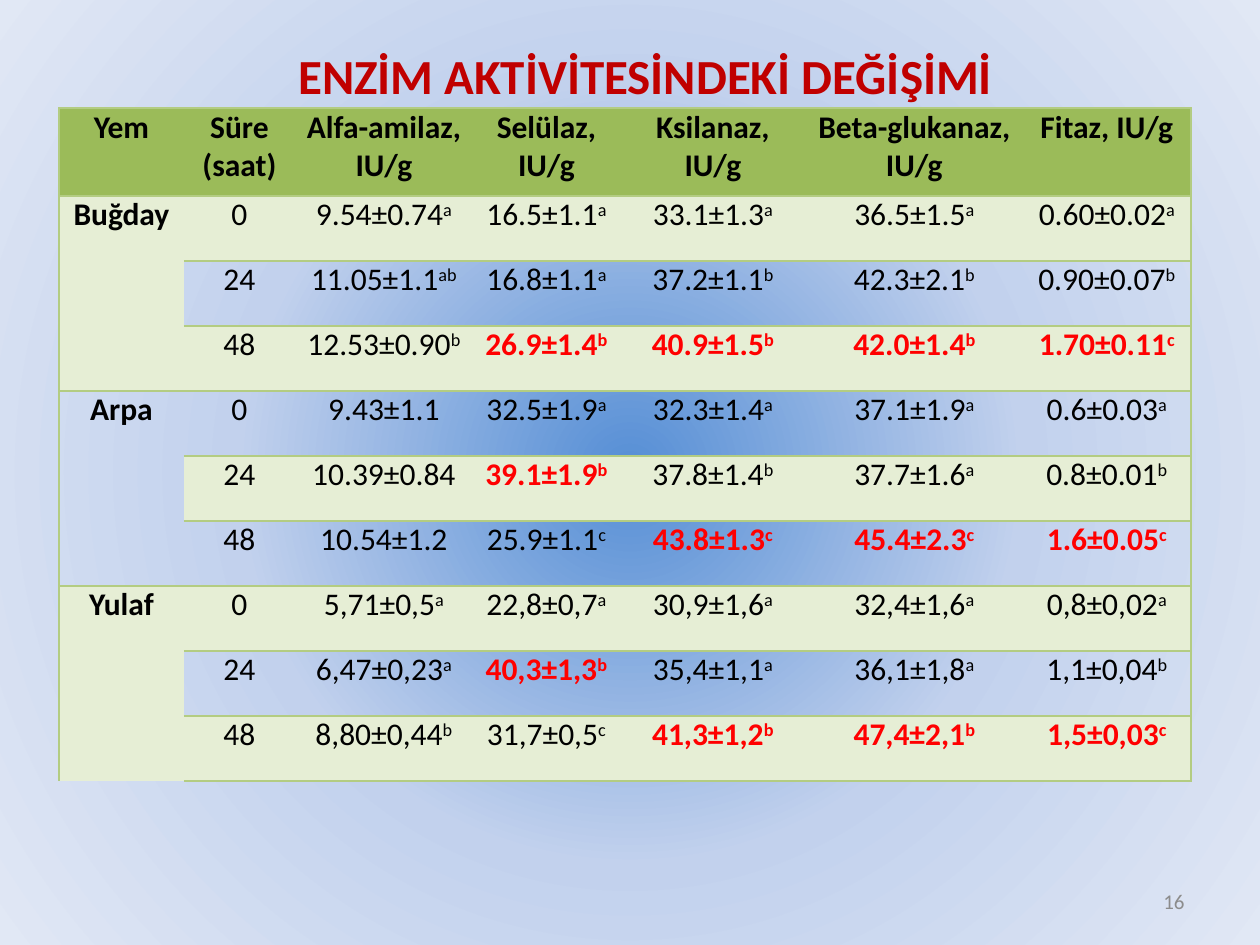
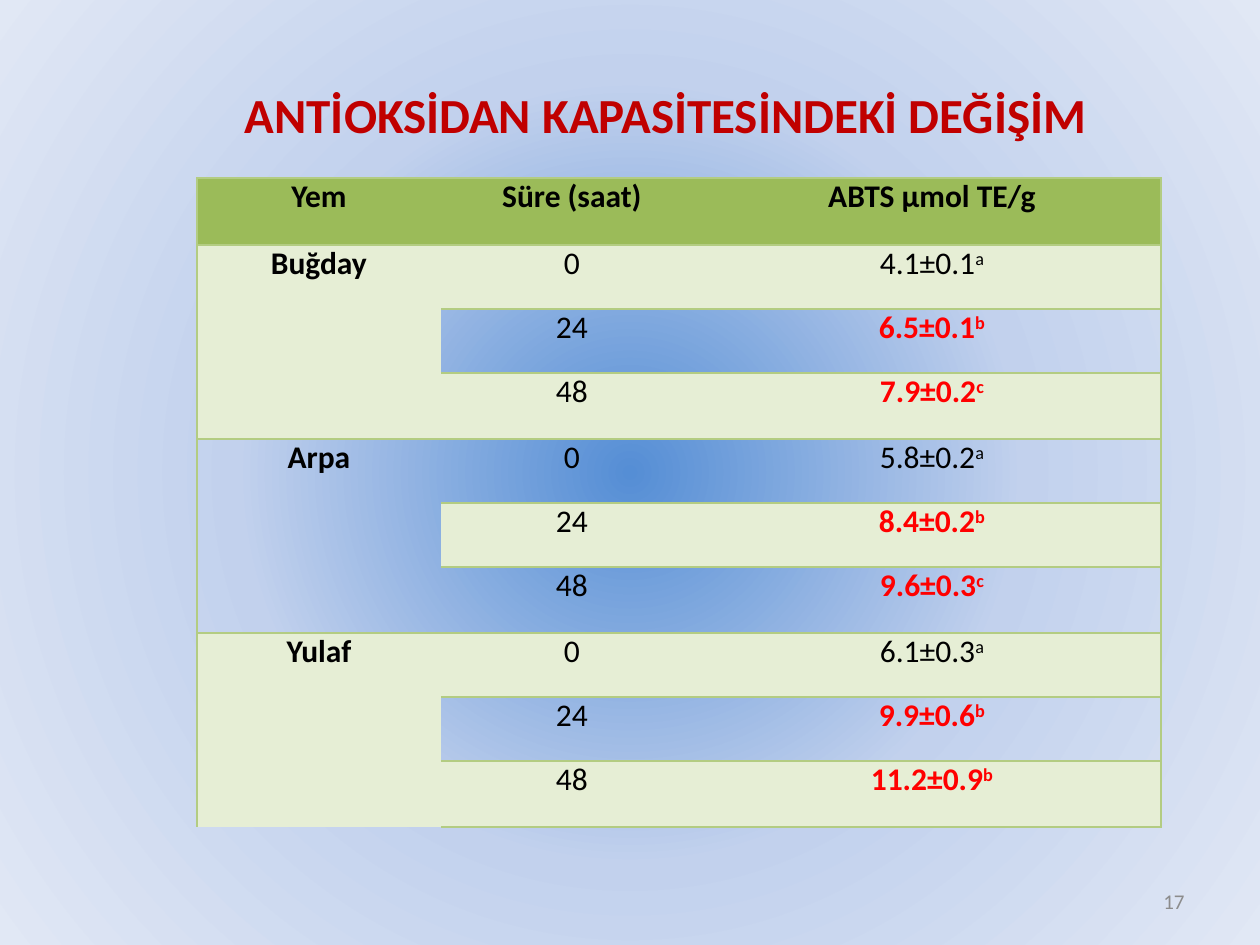
from pptx import Presentation
from pptx.dml.color import RGBColor
from pptx.enum.text import MSO_ANCHOR, PP_ALIGN
from pptx.oxml import parse_xml
from pptx.oxml.ns import nsdecls
from pptx.util import Emu, Pt

EMU_PER_PX = 914400 / 126
CENTER, RIGHT = PP_ALIGN.CENTER, PP_ALIGN.RIGHT
TOP, MIDDLE = MSO_ANCHOR.TOP, MSO_ANCHOR.MIDDLE

FONT = "Calibri"
BLACK, RED, TITLE_RED, GREY = "000000", "FF0000", "C00000", "8C8C8C"
HEADER_GREEN, BAND_GREEN, RULE_GREEN = "9BBB59", "E6EED5", "B3CC82"
GLOW = [(0, "558ED5"), (50, "C2D1ED"), (100, "E1E8F5")]
PLAIN_TABLE = "{2D5ABB26-0587-4C30-8999-92F81FD0307C}"

FEEDS = ["Buğday", "Arpa", "Yulaf"]
HOURS = ["0", "24", "48"]

# Values: "^" starts the superscript, a leading "*" marks red bold
SLIDES = [
    dict(
        number="16",
        title="ENZİM AKTİVİTESİNDEKİ DEĞİŞİMİ",
        title_box=(69, 39, 1152, 111),
        title_wraps=True,
        table_corner=(59, 108),
        column_widths=[125, 111, 178, 147, 186, 217, 168],
        header_height=88,
        group_heights=[65, 65, 65],
        header=["Yem", "Süre (saat)", "Alfa-amilaz, IU/g", "Selülaz, IU/g",
                "Ksilanaz, IU/g", "Beta-glukanaz, IU/g", "Fitaz, IU/g"],
        values=[
            ["9.54±0.74^a", "16.5±1.1^a", "33.1±1.3^a", "36.5±1.5^a", "0.60±0.02^a"],
            ["11.05±1.1^ab", "16.8±1.1^a", "37.2±1.1^b", "42.3±2.1^b", "0.90±0.07^b"],
            ["12.53±0.90^b", "*26.9±1.4^b", "*40.9±1.5^b", "*42.0±1.4^b", "*1.70±0.11^c"],
            ["9.43±1.1", "32.5±1.9^a", "32.3±1.4^a", "37.1±1.9^a", "0.6±0.03^a"],
            ["10.39±0.84", "*39.1±1.9^b", "37.8±1.4^b", "37.7±1.6^a", "0.8±0.01^b"],
            ["10.54±1.2", "25.9±1.1^c", "*43.8±1.3^c", "*45.4±2.3^c", "*1.6±0.05^c"],
            ["5,71±0,5^a", "22,8±0,7^a", "30,9±1,6^a", "32,4±1,6^a", "0,8±0,02^a"],
            ["6,47±0,23^a", "*40,3±1,3^b", "35,4±1,1^a", "36,1±1,8^a", "1,1±0,04^b"],
            ["8,80±0,44^b", "31,7±0,5^c", "*41,3±1,2^b", "*47,4±2,1^b", "*1,5±0,03^c"],
        ],
    ),
    dict(
        number="17",
        title="ANTİOKSİDAN KAPASİTESİNDEKİ DEĞİŞİM",
        title_box=(227, 78, 877, 72),
        title_wraps=False,
        table_corner=(197, 178),
        column_widths=[244, 262, 458],
        header_height=67,
        group_heights=[64, 64, 66],
        header=["Yem", "Süre (saat)", "ABTS µmol TE/g"],
        values=[["4.1±0.1^a"], ["*6.5±0.1^b"], ["*7.9±0.2^c"],
                ["5.8±0.2^a"], ["*8.4±0.2^b"], ["*9.6±0.3^c"],
                ["6.1±0.3^a"], ["*9.9±0.6^b"], ["*11.2±0.9^b"]],
    ),
]


def px(length):
    return Emu(round(length * EMU_PER_PX))


def rgb(color):
    return RGBColor.from_string(color)


def style(paragraph, size, color, bold=False, align=CENTER):
    paragraph.alignment = align
    font = paragraph.font
    font.name, font.size, font.bold = FONT, Pt(size), bold
    font.color.rgb = rgb(color)


def add_text(slide, box, text, size, color, bold=False, align=CENTER,
             anchor=TOP, wraps=True):
    frame = slide.shapes.add_textbox(*map(px, box)).text_frame
    frame.word_wrap, frame.vertical_anchor = wraps, anchor
    frame.paragraphs[0].text = text
    style(frame.paragraphs[0], size, color, bold, align)


def paint_background(master):
    """Radial glow behind every slide."""
    fill = master.background.fill
    fill.solid()
    stops = "".join(f'<a:gs pos="{position * 1000}"><a:srgbClr val="{color}"/></a:gs>'
                    for position, color in GLOW)
    glow = parse_xml(
        f'<a:gradFill {nsdecls("a")} rotWithShape="1"><a:gsLst>{stops}</a:gsLst>'
        '<a:path path="circle"><a:fillToRect l="50000" t="50000" r="50000" b="50000"/>'
        '</a:path></a:gradFill>')
    solid = master.element.xpath("p:cSld/p:bg/p:bgPr/a:solidFill")[0]
    solid.getparent().replace(solid, glow)


def draw_borders(cell, sides):
    """Sides come in the order L, R, T, B."""
    for side in sides:
        cell._tc.get_or_add_tcPr().append(parse_xml(
            f'<a:ln{side} {nsdecls("a")} w="12700"><a:solidFill>'
            f'<a:srgbClr val="{RULE_GREEN}"/></a:solidFill></a:ln{side}>'))


def fill_cell(cell, text, bold):
    marked = text.startswith("*")
    base, _, superscript = text.lstrip("*").partition("^")
    paragraph = cell.text_frame.paragraphs[0]
    style(paragraph, 18, RED if marked else BLACK, bold or marked)
    paragraph.add_run().text = base
    if superscript:
        raised = paragraph.add_run()
        raised.text = superscript
        raised.font._element.set("baseline", "30000")


def add_results(slide, content):
    widths = content["column_widths"]
    heights = [content["header_height"]] + content["group_heights"] * len(FEEDS)
    group = len(HOURS)
    rows = [content["header"]]
    for index, values in enumerate(content["values"]):
        feed = FEEDS[index // group] if index % group == 0 else ""
        rows.append([feed, HOURS[index % group]] + values)

    box = (*content["table_corner"], sum(widths), sum(heights))
    frame = slide.shapes.add_table(len(rows), len(widths), *map(px, box))
    table = frame.table
    table.first_row = table.horz_banding = False
    table._tbl.tblPr.find("{*}tableStyleId").text = PLAIN_TABLE
    for column, width in zip(table.columns, widths):
        column.width = px(width)
    for row, height in zip(table.rows, heights):
        row.height = px(height)

    for r, texts in enumerate(rows):
        for c, text in enumerate(texts):
            cell = table.cell(r, c)
            cell.margin_left = cell.margin_right = px(9)
            cell.margin_top = cell.margin_bottom = 0
            # The feed column has rules only between feeds
            sides = ["L"] if c == 0 else ["R"] if c == len(widths) - 1 else []
            if c or r == 0 or r % group == 1:
                sides.append("T")
            if c or r % group == 0:
                sides.append("B")
            draw_borders(cell, sides)
            # A feed cell takes the band of its first row
            band_row = r if c or r == 0 else (r - 1) // group * group + 1
            if r == 0 or band_row % 2:
                cell.fill.solid()
                cell.fill.fore_color.rgb = rgb(BAND_GREEN if r else HEADER_GREEN)
            else:
                cell.fill.background()
            if text:
                fill_cell(cell, text, bold=r == 0 or c == 0)

    for first in range(1, len(rows), group):
        table.cell(first, 0).merge(table.cell(first + group - 1, 0))


def main():
    prs = Presentation()
    prs.slide_width, prs.slide_height = px(1260), px(945)
    paint_background(prs.slide_master)
    for content in SLIDES:
        slide = prs.slides.add_slide(prs.slide_layouts[6])
        add_text(slide, (903, 876, 294, 50), content["number"], 12, GREY,
                 align=RIGHT, anchor=MIDDLE)
        add_results(slide, content)
        add_text(slide, content["title_box"], content["title"], 28, TITLE_RED,
                 bold=True, wraps=content["title_wraps"])
    prs.save("out.pptx")


if __name__ == "__main__":
    main()
